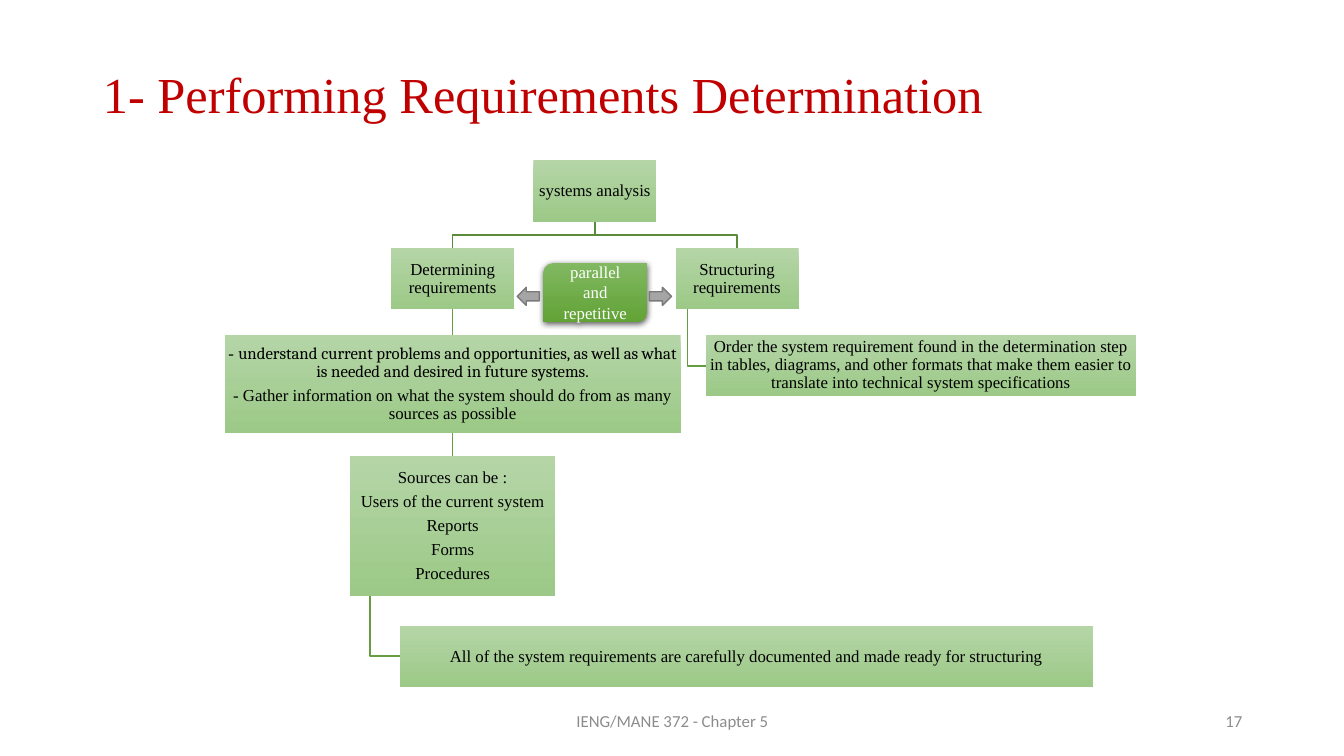
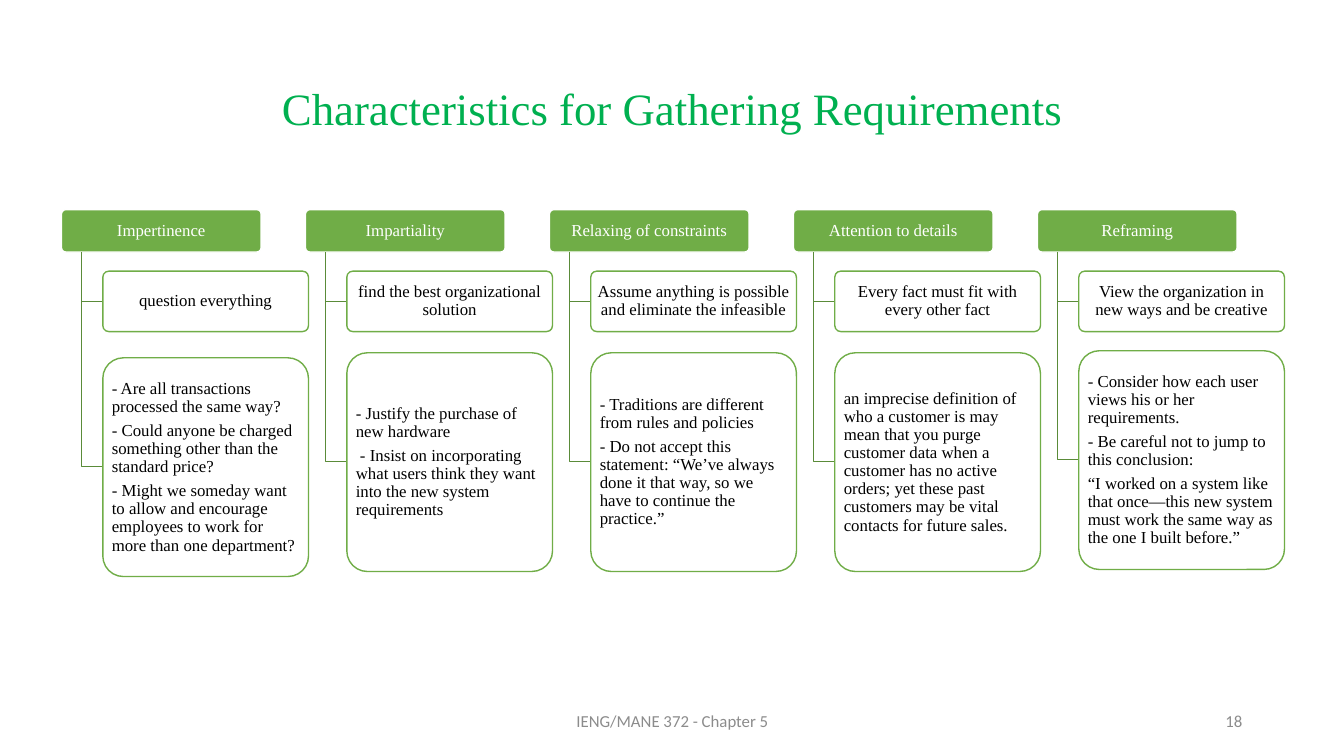
import pptx
import pptx.util
import pptx.dml.color
import pptx.enum.shapes
import pptx.enum.text
import pptx.oxml
from lxml import etree

PX = 9144  # one px is a hundredth of an inch
HUES = {
    "red": "C00000", "title": "00B050", "grey": "8C8C8C",
    "black": "000000", "white": "FFFFFF",
    "light": "B5D5A7", "mid": "9CC987", "bright": "81B861", "deep": "62A336",
    "green": "70AD47", "branch": "5A8B39", "link": "669D40",
    "arrow": "A5A5A5", "edge": "7A7A7A",
}
SERIF = "Times New Roman"
NS = "http://schemas.openxmlformats.org/drawingml/2006/main"
SHADE = (
    f'<a:effectLst xmlns:a="{NS}"><a:outerShdw blurRad="57150" dist="19050" '
    'dir="5400000" algn="ctr" rotWithShape="0"><a:srgbClr val="000000">'
    '<a:alpha val="63000"/></a:srgbClr></a:outerShdw></a:effectLst>'
)
KINDS = pptx.enum.shapes.MSO_SHAPE
ALIGN = pptx.enum.text.PP_ALIGN


def hue(name):
    return pptx.dml.color.RGBColor.from_string(HUES[name])


def scale(*sizes):
    return [size * PX for size in sizes]


class Deck:
    """Holds the shared style and the slide being filled."""

    def __init__(self):
        self.prs = pptx.Presentation()
        self.prs.slide_width, self.prs.slide_height = scale(1333, 750)

    def start(self, title, box, size, color, align, number):
        self.slide = self.prs.slides.add_slide(self.prs.slide_layouts[5])
        self.shapes = self.slide.shapes
        head = self.shapes.title
        head.left, head.top, head.width, head.height = scale(*box)
        self.put(head, [title], size=size, color=color, align=align, inset=(10, 5))
        self.label("IENG/MANE 372 - Chapter 5", (442, 695, 450, 40), ALIGN.CENTER)
        self.label(str(number), (942, 695, 300, 40), ALIGN.RIGHT)

    def put(self, shape, items, size=12, color="black", font=SERIF,
            align=ALIGN.CENTER, inset=(1, 1), lines=0.9, after=0):
        """Fill a shape with paragraphs; an item is text or a list of (text, font)."""
        frame = shape.text_frame
        frame.word_wrap = True
        frame.auto_size = pptx.enum.text.MSO_AUTO_SIZE.NONE
        frame.vertical_anchor = pptx.enum.text.MSO_ANCHOR.MIDDLE
        frame.margin_left = frame.margin_right = inset[0] * PX
        frame.margin_top = frame.margin_bottom = inset[1] * PX
        for i, item in enumerate(items):
            para = frame.add_paragraph() if i else frame.paragraphs[0]
            para.alignment = align
            para.line_spacing = lines
            para.space_before = pptx.util.Pt(0)
            para.space_after = pptx.util.Pt(after)
            para.font.size = pptx.util.Pt(size)
            para.font.color.rgb = hue(color)
            if isinstance(item, str):
                para.font.name = font
                para.add_run().text = item
                continue
            for text, face in item:
                run = para.add_run()
                run.text = text
                run.font.name = face

    def label(self, text, box, align):
        shape = self.shapes.add_textbox(*scale(*box))
        self.put(shape, [text], color="grey", font="Calibri", align=align,
                 inset=(10, 5), lines=1.0)

    def shape(self, kind, box, fill, line=None):
        """Add a preset shape; a pair of fills makes a gradient from top to bottom."""
        shape = self.shapes.add_shape(kind, *scale(*box))
        shape.shadow.inherit = False
        if isinstance(fill, tuple):
            shape.fill.gradient()
            shape.fill.gradient_angle = 270
            for stop, name, place in zip(shape.fill.gradient_stops, fill, (0, 1)):
                stop.color.rgb = hue(name)
                stop.position = place
        else:
            shape.fill.solid()
            shape.fill.fore_color.rgb = hue(fill)
        if line:
            shape.line.color.rgb = hue(line)
            shape.line.width = pptx.util.Pt(1)
        else:
            shape.line.fill.background()
        return shape

    def block(self, items, box):
        shape = self.shape(KINDS.RECTANGLE, box, ("light", "mid"))
        self.put(shape, items, after=4.2)
        return shape

    def card(self, items, box, align=ALIGN.CENTER, head=False):
        fill, line, ink = ("green", "white", "white") if head else ("white", "green", "black")
        shape = self.shape(KINDS.ROUNDED_RECTANGLE, box, fill, line)
        shape.adjustments[0] = 0.1
        if not head:
            color = shape._element.spPr.find(f"{{{NS}}}solidFill")[0]
            etree.SubElement(color, f"{{{NS}}}alpha", val="90000")
        self.put(shape, items, color=ink, align=align, inset=(3, 2), after=4.2)

    def badge(self, text, box):
        shape = self.shape(KINDS.ROUND_2_DIAG_RECTANGLE, box, ("bright", "deep"))
        props = shape._element.spPr
        props.replace(props.find(f"{{{NS}}}effectLst"), pptx.oxml.parse_xml(SHADE))
        self.put(shape, [text], color="white", inset=(10, 5), lines=1.0)

    def bend(self, points, color):
        """Draw an open line through the points."""
        first, *rest = [scale(*point) for point in points]
        trace = self.shapes.build_freeform(*first, scale=1.0)
        trace.add_line_segments(rest, close=False)
        line = trace.convert_to_shape()
        line.shadow.inherit = False
        line.fill.background()
        line.line.color.rgb = hue(color)
        line.line.width = pptx.util.Pt(1)

    def join(self, upper, lower):
        line = self.shapes.add_connector(
            pptx.enum.shapes.MSO_CONNECTOR.STRAIGHT, 0, 0, 0, 0)
        line.begin_connect(upper, 2)
        line.end_connect(lower, 0)
        line.line.color.rgb = hue("link")
        line.line.width = pptx.util.Pt(1)
        etree.SubElement(line._element.spPr, f"{{{NS}}}effectLst")


def draw_tree(deck):
    deck.start("1- Performing Requirements Determination", (92, 24, 1150, 145),
               36, "red", ALIGN.LEFT, 17)
    for x in (731, 449):
        deck.bend([(590, 220), (590, 233), (x, 233), (x, 246)], "branch")
    for x, top, end, low in ((682, 307, 700, 363), (367, 591, 397, 651)):
        deck.bend([(x, top), (x, low), (end, low)], "link")

    deck.block(["systems analysis"], (529, 159, 122, 61))
    find = deck.block(["Determining requirements"], (388, 246, 122, 61))
    goals = deck.block([
        [("- ", SERIF),
         ("understand current problems and opportunities, as well as what is needed "
          "and desired in future systems.", "Cambria")],
        "- Gather information on what the system should do from as many sources as possible",
    ], (223, 332, 452, 98))
    sources = deck.block(["Sources can be :", "Users of the current system",
                          "Reports", "Forms", "Procedures"], (347, 452, 204, 139))
    deck.join(find, goals)
    deck.join(goals, sources)
    deck.block(["All of the system requirements are carefully documented and made "
                "ready for structuring"], (397, 621, 687, 61))
    deck.block(["Structuring requirements"], (670, 246, 122, 61))
    deck.block(["Order the system requirement found in the determination step in "
                "tables, diagrams, and other formats that make them easier to "
                "translate into technical system specifications"], (700, 332, 427, 61))

    deck.badge("parallel and repetitive", (539, 261, 103, 58))
    deck.shape(KINDS.LEFT_ARROW, (513, 285, 22, 18), "arrow", "edge")
    deck.shape(KINDS.RIGHT_ARROW, (644, 285, 22, 18), "arrow", "edge")


TRAITS = [
    ("Impertinence", "question everything", 355, [
        "- Are all transactions processed the same way?",
        "- Could anyone be charged something other than the standard price?",
        "- Might we someday want to allow and encourage employees to work for more "
        "than one department?"]),
    ("Impartiality", "find the best organizational solution", 350, [
        "- Justify the purchase of new hardware",
        " - Insist on incorporating what users think they want into the new system "
        "requirements"]),
    ("Relaxing of constraints",
     "Assume anything is possible and eliminate the infeasible", 350, [
         "- Traditions are different from rules and policies",
         "- Do not accept this statement: “We’ve always done it that way, so we have "
         "to continue the practice.”"]),
    ("Attention to details", "Every fact must fit with every other fact", 350, [
        "an imprecise definition of who a customer is may mean that you purge "
        "customer data when a customer has no active orders; yet these past "
        "customers may be vital contacts for future sales."]),
    ("Reframing", "View the organization in new ways and be creative", 348, [
        "- Consider how each user views his or her requirements.",
        "- Be careful not to jump to this conclusion:",
        "“I worked on a system like that once—this new system must work the same way "
        "as the one I built before.”"]),
]


def draw_traits(deck):
    deck.start("Characteristics for Gathering Requirements", (130, 80, 1074, 60),
               32, "title", ALIGN.CENTER, 18)
    for i, (name, motto, top, notes) in enumerate(TRAITS):
        left = 61 + 242 * i
        stem, inner = left + 20, left + 41
        deck.card([name], (left, 208, 198, 42), head=True)
        for items, y, high, align in (([motto], 269, 60, ALIGN.CENTER),
                                      (notes, top, 217, ALIGN.LEFT)):
            middle = y + high // 2
            deck.bend([(stem, 250), (stem, middle), (inner, middle)], "branch")
            deck.card(items, (inner, y, 204, high), align)


def main():
    deck = Deck()
    draw_tree(deck)
    draw_traits(deck)
    deck.prs.save("out.pptx")


if __name__ == "__main__":
    main()
